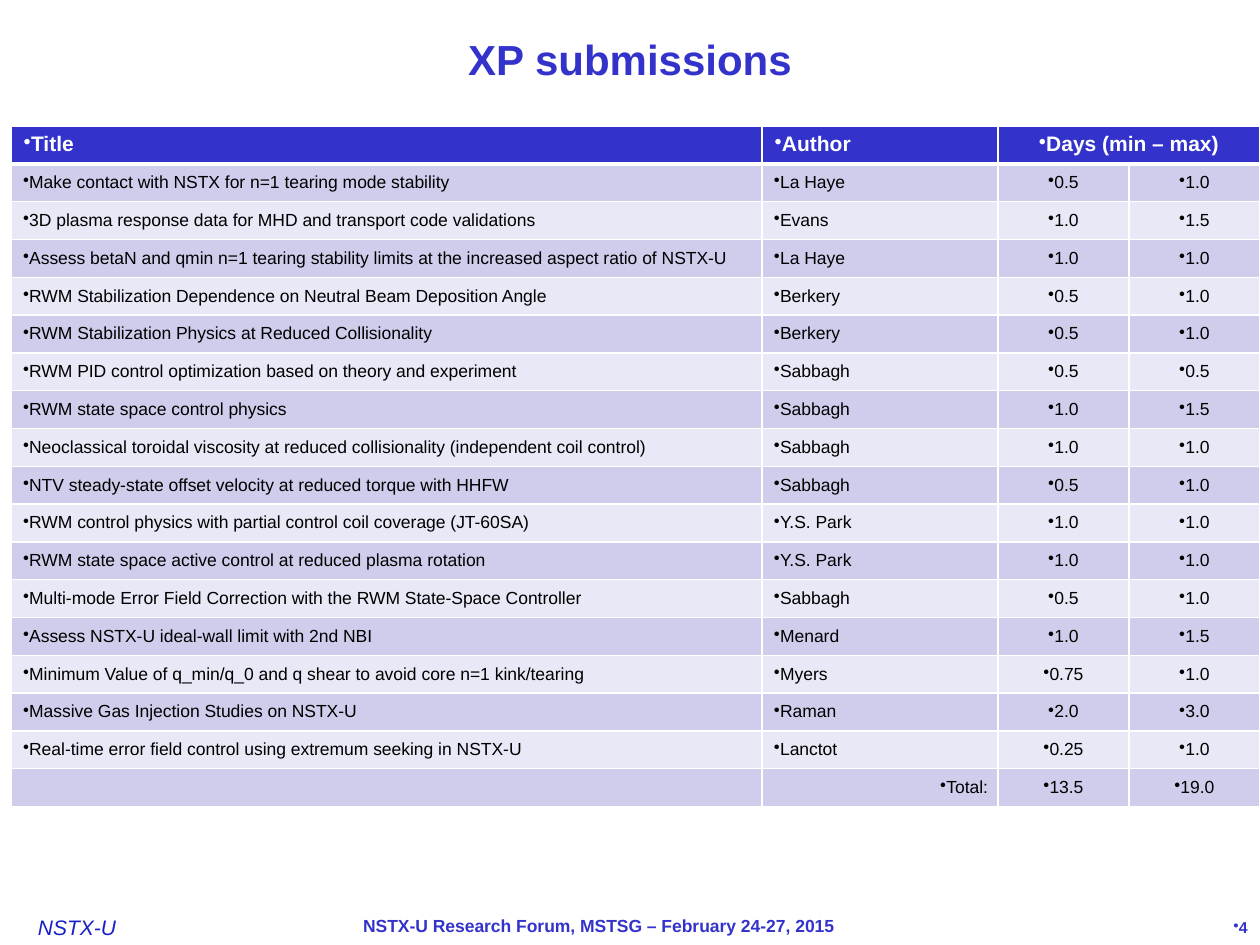
from dataclasses import dataclass

from lxml.etree import SubElement as Sub
from pptx import Presentation
from pptx.dml.color import RGBColor as RGB
from pptx.enum.text import MSO_ANCHOR as Anchor, PP_ALIGN as Align
from pptx.oxml.ns import qn
from pptx.util import Pt

PX = 914400 // 126


@dataclass(frozen=True)
class Theme:
    font: str = "Arial"
    blue: str = "3333CC"
    logo: str = "171FC7"
    white: str = "FFFFFF"
    black: str = "000000"
    bands: tuple = ("CECEEC", "E8E8F6")
    title: int = 24
    head: int = 12
    body: int = 10
    page: int = 9


THEME = Theme()
HEAD = ("Title", "Author", "Days (min – max)")
ROWS = (
    ("Make contact with NSTX for n=1 tearing mode stability", "La Haye", "0.5", "1.0"),
    ("3D plasma response data for MHD and transport code validations", "Evans", "1.0", "1.5"),
    ("Assess betaN and qmin n=1 tearing stability limits at the increased aspect ratio of NSTX-U",
     "La Haye", "1.0", "1.0"),
    ("RWM Stabilization Dependence on Neutral Beam Deposition Angle", "Berkery", "0.5", "1.0"),
    ("RWM Stabilization Physics at Reduced Collisionality", "Berkery", "0.5", "1.0"),
    ("RWM PID control optimization based on theory and experiment", "Sabbagh", "0.5", "0.5"),
    ("RWM state space control physics", "Sabbagh", "1.0", "1.5"),
    ("Neoclassical toroidal viscosity at reduced collisionality (independent coil control)",
     "Sabbagh", "1.0", "1.0"),
    ("NTV steady-state offset velocity at reduced torque with HHFW", "Sabbagh", "0.5", "1.0"),
    ("RWM control physics with partial control coil coverage (JT-60SA)", "Y.S. Park", "1.0", "1.0"),
    ("RWM state space active control at reduced plasma rotation", "Y.S. Park", "1.0", "1.0"),
    ("Multi-mode Error Field Correction with the RWM State-Space Controller",
     "Sabbagh", "0.5", "1.0"),
    ("Assess NSTX-U ideal-wall limit with 2nd NBI", "Menard", "1.0", "1.5"),
    ("Minimum Value of q_min/q_0 and q shear to avoid core n=1 kink/tearing",
     "Myers", "0.75", "1.0"),
    ("Massive Gas Injection Studies on NSTX-U", "Raman", "2.0", "3.0"),
    ("Real-time error field control using extremum seeking in NSTX-U", "Lanctot", "0.25", "1.0"),
    ("", "Total:", "13.5", "19.0"),
)


def style(para, size, color, bold=False, italic=False, align=Align.LEFT):
    para.alignment = align
    font = para.font
    font.name, font.size = THEME.font, Pt(size)
    font.bold, font.italic = bold, italic
    font.color.rgb = RGB.from_string(color)
    for run in para.runs:
        run.font.name, run.font.size = THEME.font, Pt(size)
        run.font.bold, run.font.italic = bold, italic
        run.font.color.rgb = RGB.from_string(color)


def bullet(para, left=0):
    props = para._p.get_or_add_pPr()
    props.set("marL", str(left * PX))
    props.set("indent", "0")
    Sub(props, qn("a:buChar"), char="•")


def label(slide, box, text, size, color, inset=None, dot=False, **look):
    shape = slide.shapes.add_textbox(*(n * PX for n in box))
    frame = shape.text_frame
    frame.word_wrap = True
    frame.vertical_anchor = Anchor.MIDDLE
    if inset is not None:
        frame.margin_left = frame.margin_right = inset * PX
        frame.margin_top = frame.margin_bottom = inset * PX
    frame.text = text
    para = frame.paragraphs[0]
    if dot:
        bullet(para)
    style(para, size, color, **look)


def border(cell, base=1):
    props = cell._tc.get_or_add_tcPr()
    for side, width in (("L", 1), ("R", 1), ("T", 1), ("B", base)):
        line = Sub(props, qn(f"a:ln{side}"), w=str(Pt(width)))
        Sub(Sub(line, qn("a:solidFill")), qn("a:srgbClr"), val=THEME.white)


def paint(cell, color, base=1):
    border(cell, base)
    cell.fill.solid()
    cell.fill.fore_color.rgb = RGB.from_string(color)


def header(table):
    for col, cell in enumerate(table.rows[0].cells):
        paint(cell, THEME.blue, base=3)
        if col < len(HEAD):
            cell.text_frame.text = HEAD[col]
            para = cell.text_frame.paragraphs[0]
            bullet(para)
            style(para, THEME.head, THEME.white, bold=True,
                  align=Align.CENTER if col == 2 else Align.LEFT)
    table.cell(0, 2).merge(table.cell(0, 3))


def entry(cell, text, col, color):
    paint(cell, color)
    total = text == "Total:"
    cell.vertical_anchor = Anchor.MIDDLE
    cell.margin_left = cell.margin_top = cell.margin_bottom = 0
    cell.margin_right = 10 * PX if total else 0
    cell.text_frame.text = text
    para = cell.text_frame.paragraphs[0]
    if text:
        bullet(para, 12 if col < 2 else 0)
    align = Align.RIGHT if total else Align.CENTER if col > 1 else Align.LEFT
    style(para, THEME.body, THEME.black, align=align)


def grid(slide, left, top, width, height):
    """Place the submissions table in the box."""
    frame = slide.shapes.add_table(len(ROWS) + 1, 4, left * PX, top * PX,
                                   width * PX, height * PX)
    table = frame.table
    table.horz_banding = False
    wide, day = 751, 131
    for col, size in zip(table.columns, (wide, width - wide - 2 * day, day, day)):
        col.width = size * PX
    first = 37
    for num, row in enumerate(table.rows):
        row.height = (height - first) * PX // len(ROWS) if num else first * PX
    header(table)
    for num, texts in enumerate(ROWS):
        for col, text in enumerate(texts):
            entry(table.cell(num + 1, col), text, col, THEME.bands[num % 2])


def footer(slide, left, top, width, height):
    """Place the name, the event and the page number along the box."""
    label(slide, (left + 38, top + 8, 98, 25), "NSTX-U", THEME.head, THEME.logo,
          inset=0, italic=True)
    label(slide, (left + 105, top, 987, height), "NSTX-U Research Forum, MSTSG – February 24-27, 2015",
          THEME.body, THEME.blue, inset=0, bold=True, align=Align.CENTER)
    label(slide, (left + width - 105, top + 10, 105, 21), "4", THEME.page, THEME.blue,
          dot=True, bold=True, align=Align.RIGHT)


def main():
    deck = Presentation()
    deck.slide_width, deck.slide_height = 1260 * PX, 945 * PX
    slide = deck.slides.add_slide(deck.slide_layouts[6])
    footer(slide, 0, 907, 1260, 38)
    label(slide, (0, 3, 1260, 112), "XP submissions", THEME.title, THEME.blue,
          bold=True, align=Align.CENTER)
    grid(slide, 11, 126, 1249, 680)
    deck.save("out.pptx")


if __name__ == "__main__":
    main()
